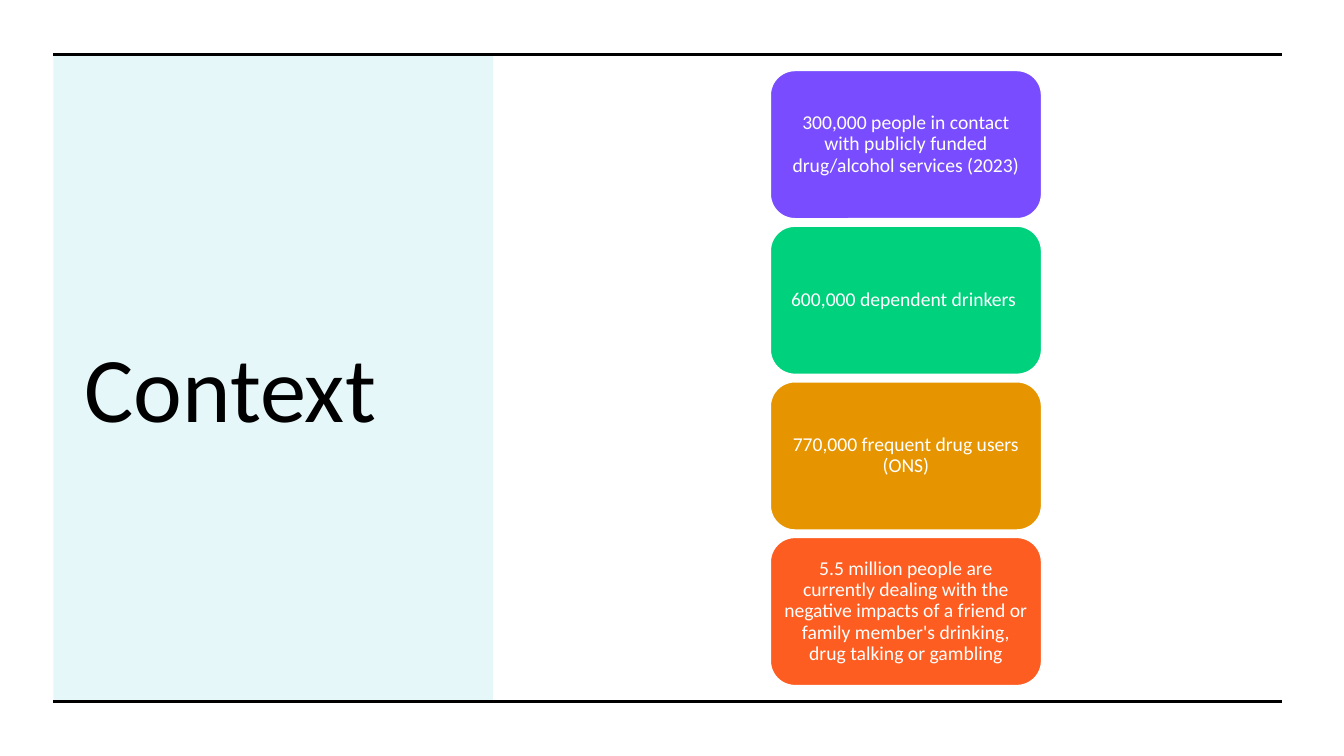
from lxml import etree
from pptx import Presentation
from pptx.dml.color import RGBColor
from pptx.enum import shapes, text
from pptx.oxml import ns
from pptx.util import Inches, Pt


def colour(hex_string):
    return RGBColor.from_string(hex_string)


def write(shape, words, size, ink, align, inset_x=0.1, inset_y=0.05, spacing=1.0):
    frame = shape.text_frame
    frame.word_wrap = True
    frame.auto_size = text.MSO_AUTO_SIZE.NONE
    frame.vertical_anchor = text.MSO_ANCHOR.MIDDLE
    frame.margin_left = frame.margin_right = Inches(inset_x)
    frame.margin_top = frame.margin_bottom = Inches(inset_y)
    paragraph = frame.paragraphs[0]
    paragraph.alignment = align
    paragraph.line_spacing = spacing
    run = paragraph.add_run()
    run.text = words
    run.font.name = "Calibri"
    run.font.size = Pt(size)
    run.font.color.rgb = colour(ink)


deck = Presentation()
deck.slide_width, deck.slide_height = Inches(13.33), Inches(7.5)
slide = deck.slides.add_slide(deck.slide_layouts[5])

# Tinted panel, placed behind the title
panel = slide.shapes.add_shape(shapes.MSO_SHAPE.RECTANGLE, Inches(0.53), Inches(0.54),
                               Inches(4.36), Inches(6.41))
panel.shadow.inherit = False
panel.line.fill.background()
panel.fill.solid()
panel.fill.fore_color.rgb = colour("00BAC8")
tint = panel._element.spPr.find(".//" + ns.qn("a:srgbClr"))
etree.SubElement(tint, ns.qn("a:alpha"), val="10000")
slide.shapes._spTree.insert(2, panel._element)

# Title
title = slide.shapes.title
title.left, title.top = Inches(0.74), Inches(1.07)
title.width, title.height = Inches(3.89), Inches(5.5)
write(title, "Context", 66, "000000", text.PP_ALIGN.LEFT)

# Rules above and below the content
for rule_y in (0.54, 6.96):
    rule = slide.shapes.add_connector(shapes.MSO_CONNECTOR.STRAIGHT, Inches(0.53),
                                      Inches(rule_y), Inches(12.72), Inches(rule_y))
    rule.line.color.rgb = colour("000000")
    rule.line.width = Pt(2.25)
    etree.SubElement(rule._element.spPr, ns.qn("a:effectLst"))

# Stack of key figures
figures = [
    ("300,000 people in contact with publicly funded drug/alcohol services (2023)", "794DFF"),
    ("600,000 dependent drinkers ", "00D17D"),
    ("770,000 frequent drug users (ONS)", "E69500"),
    ("5.5 million people are currently dealing with the negative impacts of a friend or "
     "family member's drinking, drug talking or gambling", "FE5D21"),
]
first_top, pitch = 0.7, 1.544
for row, (figure, fill) in enumerate(figures):
    card = slide.shapes.add_shape(shapes.MSO_SHAPE.ROUNDED_RECTANGLE, Inches(7.64),
                                  Inches(first_top + row * pitch), Inches(2.69), Inches(1.47))
    card.shadow.inherit = False
    card.fill.solid()
    card.fill.fore_color.rgb = colour(fill)
    card.line.color.rgb = colour("FFFFFF")
    card.line.width = Pt(1)
    # The rounded corners already inset the text by 0.07 inches
    write(card, figure, 14, "FFFFFF", text.PP_ALIGN.CENTER, 0.06, 0.03, 0.9)

deck.save("out.pptx")
